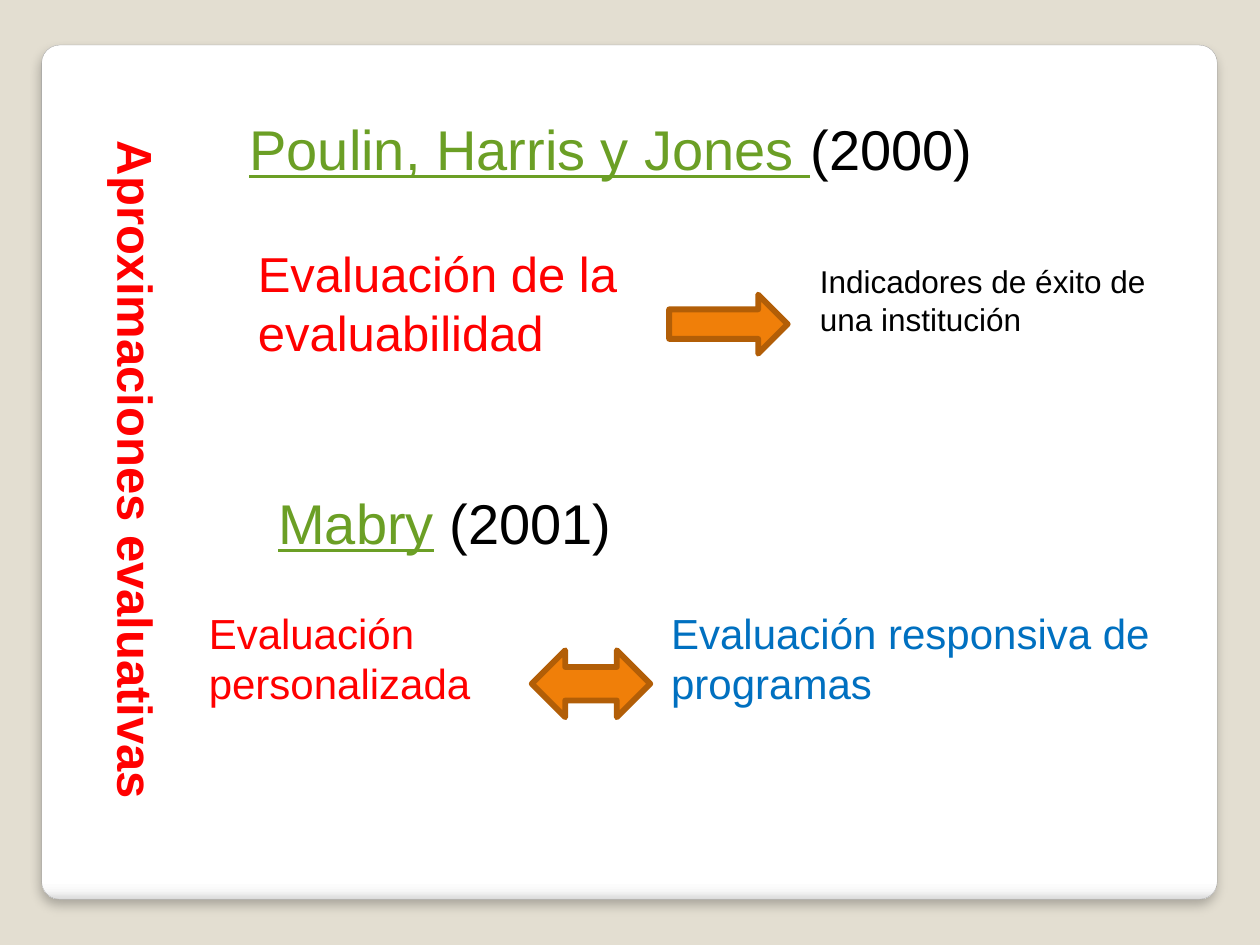
"""Build the slide on evaluation approaches with python-pptx."""
from lxml.etree import SubElement
from pptx import Presentation
from pptx.dml.color import RGBColor
from pptx.enum.shapes import MSO_SHAPE as SHAPE
from pptx.enum.text import MSO_AUTO_SIZE as AUTO_SIZE
from pptx.oxml.ns import qn
from pptx.util import Cm, Pt

COLORS = {
    "background": "E3DED1",
    "card": "FFFFFF",
    "card_fade": "F7F7F7",
    "card_edge": "DADADA",
    "card_line": "A4A4A4",
    "black": "000000",
    "green": "6B9F25",
    "red": "FF0000",
    "blue": "0070C0",
    "orange": "F07F09",
    "brown": "B25E07",
}


def rgb(name):
    return RGBColor.from_string(COLORS[name])


def add_child(parent, tag, **attributes):
    return SubElement(parent, qn(tag), {key: str(value) for key, value in attributes.items()})


def add_color(parent, name):
    return add_child(parent, "a:srgbClr", val=COLORS[name])


def add_preset(page, kind, place, line_color, line_width):
    shape = page.shapes.add_shape(kind, *map(Cm, place))
    shape.shadow.inherit = False
    shape.line.color.rgb = rgb(line_color)
    shape.line.width = Pt(line_width)
    return shape


def add_card(page):
    card = add_preset(page, SHAPE.ROUNDED_RECTANGLE, (0.84, 0.91, 23.7, 17.22), "card_line", 0.16)
    card.adjustments[0] = 0.021
    card.fill.gradient()
    card.fill.gradient_angle = 270
    properties = card._element.spPr
    stops = properties.find(".//" + qn("a:gsLst"))
    stops.clear()
    for percent, color in ((0, "card"), (98, "card"), (99, "card_fade"), (100, "card_edge")):
        add_color(add_child(stops, "a:gs", pos=percent * 1000), color)
    shadow = add_child(properties.find(qn("a:effectLst")), "a:outerShdw",
                       blurRad=Pt(6), dist=Pt(4), dir=90 * 60000, algn="t", rotWithShape=0)
    add_child(add_color(shadow, "black"), "a:alpha", val=25000)


def add_arrow(page, kind, place):
    arrow = add_preset(page, kind, place, "brown", 3.35)
    arrow.fill.solid()
    arrow.fill.fore_color.rgb = rgb("orange")


def add_text(page, place, size, spans, wrap=True):
    box = page.shapes.add_textbox(*map(Cm, place))
    box.text_frame.word_wrap = wrap
    box.text_frame.auto_size = AUTO_SIZE.SHAPE_TO_FIT_TEXT
    para = box.text_frame.paragraphs[0]
    for text, color, extras in spans:
        span = para.add_run()
        span.text = text
        span.font.color.rgb = rgb(color)
        for name, value in {"name": "Arial", "size": Pt(size), **extras}.items():
            setattr(span.font, name, value)
    return box


def add_heading(page, place, authors, year):
    spans = [(authors, "green", {"underline": True}), (year, "black", {})]
    add_text(page, place, 32, spans, wrap=False)


def add_side_title(page):
    bold = {"bold": True}
    spans = [("Aproximaciones ", "red", bold), ("evaluativas", "red", bold)]
    box = add_text(page, (1.78, 2.59, 1.7, 13.97), 28, spans, wrap=False)
    box.text_frame._txBody.bodyPr.set("vert", "vert")
    properties = box.text_frame.paragraphs[0].runs[-1]._r.get_or_add_rPr()
    outline = add_child(properties, "a:ln", w=Pt(0.75))
    properties.insert(0, outline)
    add_color(add_child(outline, "a:solidFill"), "black")
    add_child(outline, "a:prstDash", val="sysDot")


def main():
    deck = Presentation()
    deck.slide_width, deck.slide_height = Cm(25.4), Cm(19.05)
    page = deck.slides.add_slide(deck.slide_layouts[6])
    page.background.fill.solid()
    page.background.fill.fore_color.rgb = rgb("background")

    add_card(page)
    add_heading(page, (4.78, 2.18, 15.49, 1.63), "Poulin, Harris y Jones ", "(2000)")
    add_heading(page, (5.36, 9.73, 7.26, 1.63), "Mabry", " (2001)")
    add_side_title(page)
    for place, size, text, color in (
        ((16.28, 5.16, 7.77, 1.8), 18, "Indicadores de éxito de una institución", "black"),
        ((4.95, 4.78, 8.33, 2.64), 28, "Evaluación de la evaluabilidad", "red"),
        ((3.96, 12.12, 6.55, 2.31), 24, "Evaluación personalizada", "red"),
        ((13.28, 12.12, 11.13, 2.31), 24, "Evaluación responsiva de programas", "blue"),
    ):
        add_text(page, place, size, [(text, color, {})])
    add_arrow(page, SHAPE.RIGHT_ARROW, (13.49, 5.94, 2.39, 1.19))
    add_arrow(page, SHAPE.LEFT_RIGHT_ARROW, (10.72, 13.11, 2.39, 1.35))
    deck.save("out.pptx")


if __name__ == "__main__":
    main()
